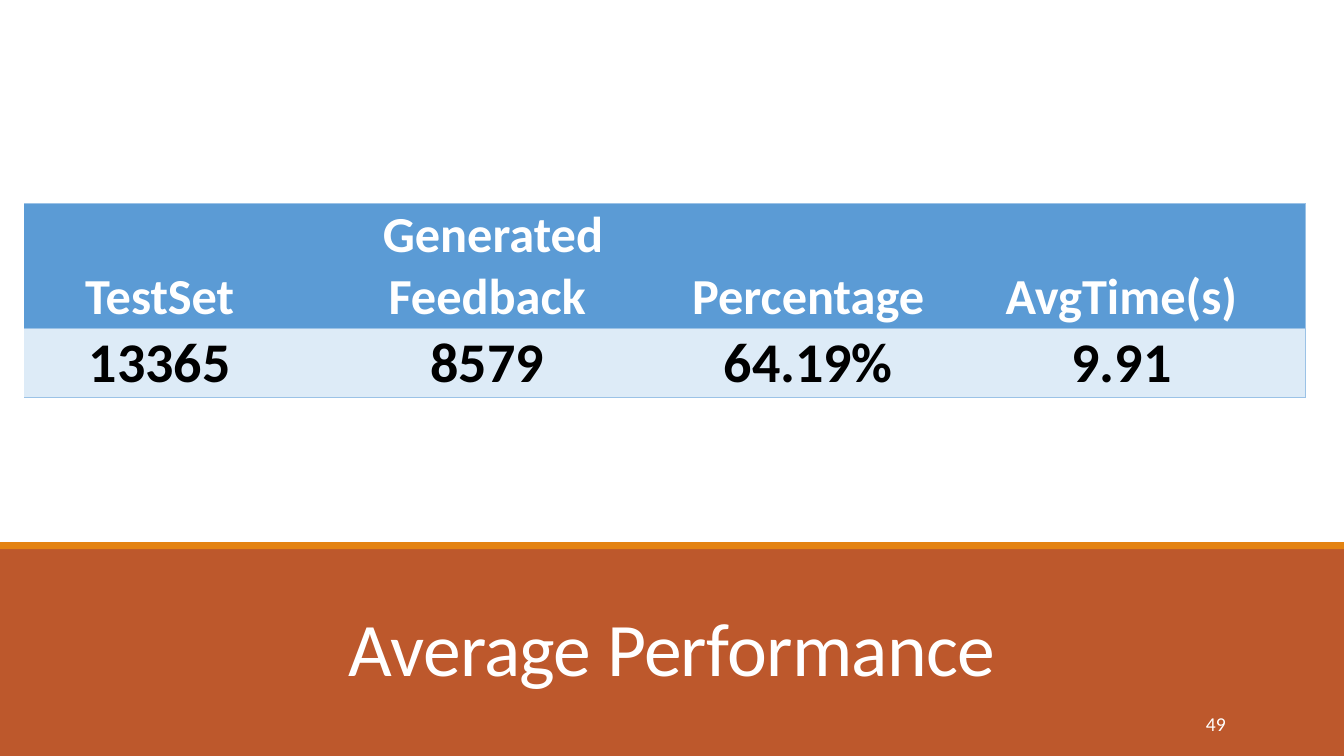
from lxml.etree import SubElement
from pptx import Presentation
from pptx.dml.color import RGBColor
from pptx.enum.shapes import MSO_SHAPE as Shape
from pptx.enum.text import MSO_ANCHOR as Anchor, MSO_AUTO_SIZE as AutoSize, PP_ALIGN as Align
from pptx.oxml import parse_xml
from pptx.oxml.ns import nsdecls, qn
from pptx.util import Pt

WIDTH, HEIGHT = 960, 540
WHITE, BLACK = "FFFFFF", "000000"
RUST, ORANGE = "BD582C", "E48312"
HEADER_BLUE, PALE_BLUE, BORDER_BLUE = "5B9BD5", "DDEBF7", "9BC2E6"
NO_TABLE_STYLE = "{2D5ABB26-0587-4C30-8999-92F81FD0307C}"

COLUMN_WIDTHS = [193.7, 274.3, 184.3, 263.1]
HEADINGS = ["TestSet", " Generated Feedback", "Percentage", "AvgTime(s)"]
RESULTS = ["13365", "8579", "64.19%", "9.91"]


def paint(color_format, color):
    color_format.rgb = RGBColor.from_string(color)


def fill_with(owner, color):
    owner.fill.solid()
    paint(owner.fill.fore_color, color)


def write(frame, text, size, color=WHITE, bold=False, align=Align.CENTER,
          line_spacing=None, tracking=None):
    paragraph = frame.paragraphs[0]
    paragraph.alignment = align
    paragraph.line_spacing = line_spacing
    run = paragraph.add_run()
    run.text = text
    run.font.name = "Calibri"
    run.font.size = Pt(size)
    run.font.bold = bold
    paint(run.font.color, color)
    if tracking is not None:
        run.font._element.set("spc", str(round(tracking * 100)))


def add_band(slide, top, height, color):
    band = slide.shapes.add_shape(Shape.RECTANGLE, 0, Pt(top), Pt(WIDTH), Pt(height))
    band.shadow.inherit = False
    fill_with(band, color)
    band.line.fill.background()


def add_title(slide, text):
    title = slide.shapes.title
    title.left, title.top, title.width, title.height = Pt(82), Pt(430), Pt(796), Pt(64.5)
    frame = title.text_frame
    frame.auto_size = AutoSize.NONE
    frame.vertical_anchor = Anchor.BOTTOM
    frame.margin_top = frame.margin_bottom = 0
    write(frame, text, 54, line_spacing=0.85, tracking=-0.5)
    slide.shapes._spTree.append(title._element)


def add_page_number(slide, number):
    box = slide.shapes.add_textbox(Pt(755.5), Pt(497), Pt(127.2), Pt(40))
    box.text_frame.word_wrap = True
    box.text_frame.vertical_anchor = Anchor.MIDDLE
    write(box.text_frame, number, 14, align=Align.RIGHT)


def border_cell(cell, sides):
    properties = cell._tc.get_or_add_tcPr()
    for position, side in enumerate(sides):
        border = parse_xml(f'<a:ln{side} {nsdecls("a")} w="{Pt(0.5)}"/>')
        solid = SubElement(border, qn("a:solidFill"))
        SubElement(solid, qn("a:srgbClr"), val=BORDER_BLUE)
        properties.insert(position, border)


def fill_row(table, row, texts, size, color, background):
    for column, text in enumerate(texts):
        cell = table.cell(row, column)
        cell.margin_left = cell.margin_right = cell.margin_top = Pt(0.75)
        cell.margin_bottom = 0
        cell.vertical_anchor = Anchor.BOTTOM
        fill_with(cell, background)
        write(cell.text_frame, text, size, color, bold=True)
        border_cell(cell, "RTB" if column == len(texts) - 1 else "TB")


def add_results_table(slide):
    table = slide.shapes.add_table(2, len(HEADINGS), Pt(17.2), Pt(145.4),
                                   Pt(sum(COLUMN_WIDTHS)), Pt(138.2)).table
    table._tbl.tblPr.find(qn("a:tableStyleId")).text = NO_TABLE_STYLE
    table.horz_banding = False
    for column, width in zip(table.columns, COLUMN_WIDTHS):
        column.width = Pt(width)
    for row, height in zip(table.rows, [88.7, 49.5]):
        row.height = Pt(height)
    fill_row(table, 0, HEADINGS, 36, WHITE, HEADER_BLUE)
    fill_row(table, 1, RESULTS, 40, BLACK, PALE_BLUE)


def main():
    deck = Presentation()
    deck.slide_width, deck.slide_height = Pt(WIDTH), Pt(HEIGHT)
    slide = deck.slides.add_slide(deck.slide_layouts[5])
    fill_with(slide.background, WHITE)
    add_band(slide, 390, 150, RUST)
    add_band(slide, 387.2, 5, ORANGE)
    add_title(slide, "Average Performance")
    add_results_table(slide)
    add_page_number(slide, "49")
    deck.save("out.pptx")


if __name__ == "__main__":
    main()
